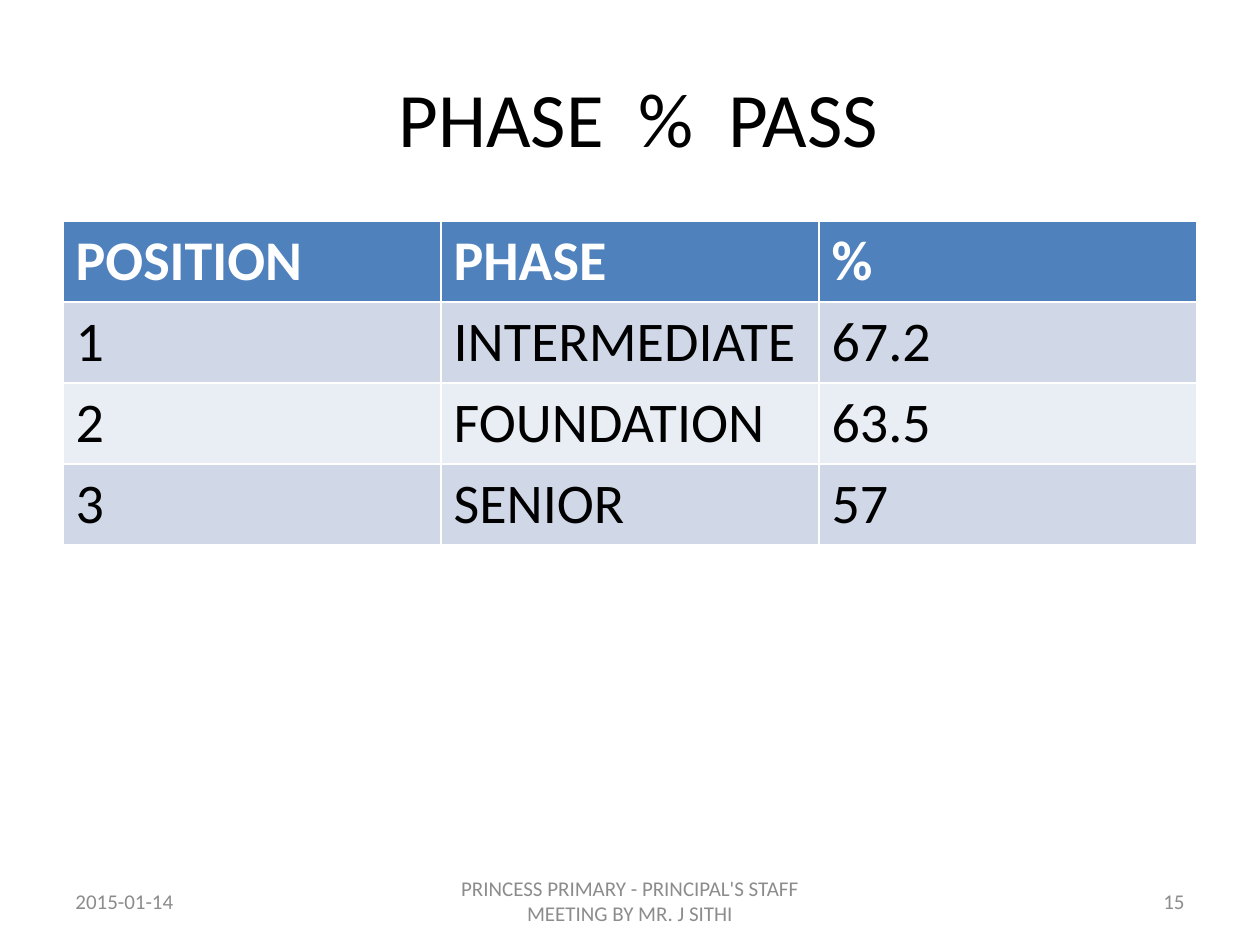
from pptx import Presentation
from pptx.dml.color import RGBColor
from pptx.enum.text import MSO_ANCHOR as Anchor, PP_ALIGN as Align
from pptx.util import Pt

PX = 914400 / 126
FONT = "Calibri"
BLACK, WHITE, GREY = "000000", "FFFFFF", "8C8C8C"
HEADER_FILL, BAND_FILLS = "4F81BD", ("D0D8E8", "E9EDF4")
RESULTS = [
    ("POSITION", "PHASE", "%"),
    ("1", "INTERMEDIATE", "67.2"),
    ("2", "FOUNDATION", "63.5"),
    ("3", "SENIOR", "57"),
]


def px(length):
    """Turn pixels into EMU."""
    return round(length * PX)


def paint(color_format, color):
    """Give a colour format a hex colour."""
    color_format.rgb = RGBColor.from_string(color)


def style(paragraph, size, color, bold=False, align=Align.LEFT):
    """Set the font and alignment of a paragraph."""
    paragraph.alignment = align
    font = paragraph.font
    font.name, font.size, font.bold = FONT, Pt(size), bold
    paint(font.color, color)


def add_text(slide, box, text, size, color, align):
    """Place a line of wrapped text, centred vertically in its box."""
    frame = slide.shapes.add_textbox(*map(px, box)).text_frame
    frame.word_wrap = True
    frame.vertical_anchor = Anchor.MIDDLE
    frame.text = text
    style(frame.paragraphs[0], size, color, align=align)


def add_title(slide, box):
    """Place the slide title."""
    add_text(slide, box, " PHASE  %  PASS", 44, BLACK, Align.CENTER)


def add_results(slide, box):
    """Place the pass-rate table with equal rows and columns."""
    table = slide.shapes.add_table(len(RESULTS), len(RESULTS[0]), *map(px, box)).table
    for r, row in enumerate(RESULTS):
        header = r == 0
        fill = HEADER_FILL if header else BAND_FILLS[(r - 1) % 2]
        for c, value in enumerate(row):
            cell = table.cell(r, c)
            cell.text = value
            cell.fill.solid()
            paint(cell.fill.fore_color, fill)
            style(cell.text_frame.paragraphs[0], 32, WHITE if header else BLACK, header)


def add_footer(slide, box):
    """Place the date, the meeting name and the slide number."""
    left, top, width, height = box
    side, middle = 294, 400
    meeting = "PRINCESS PRIMARY - PRINCIPAL'S STAFF MEETING BY MR. J SITHI"
    parts = [
        (0, side, "2015-01-14", Align.LEFT),
        ((width - middle) // 2, middle, meeting, Align.CENTER),
        (width - side, side, "15", Align.RIGHT),
    ]
    for offset, part_width, text, align in parts:
        add_text(slide, (left + offset, top, part_width, height), text, 12, GREY, align)


def main():
    """Build the slide and save it."""
    deck = Presentation()
    deck.slide_width, deck.slide_height = px(1260), px(945)
    slide = deck.slides.add_slide(deck.slide_layouts[6])
    add_title(slide, (63, 38, 1134, 157))
    add_results(slide, (63, 221, 1134, 324))
    add_footer(slide, (63, 876, 1134, 50))
    deck.save("out.pptx")


if __name__ == "__main__":
    main()
